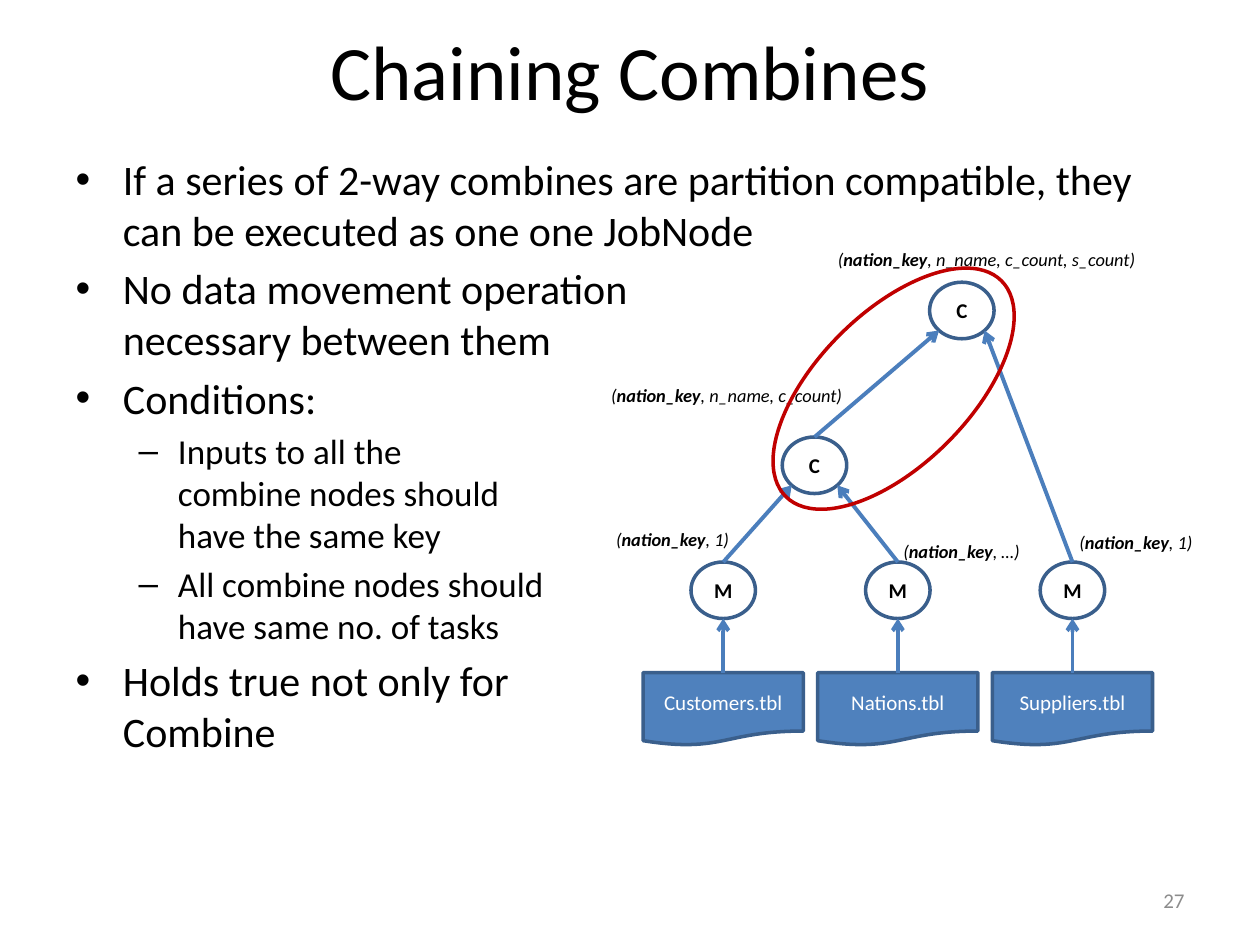
from math import sqrt

from lxml import etree
from pptx import Presentation
from pptx import util as u
from pptx.dml.color import RGBColor
from pptx.enum import shapes, text
from pptx.oxml.ns import qn

BLACK = RGBColor(0x00, 0x00, 0x00)
WHITE = RGBColor(0xFF, 0xFF, 0xFF)
GREY = RGBColor(0x8C, 0x8C, 0x8C)
BLUE = RGBColor(0x4F, 0x81, 0xBD)
OUTLINE = RGBColor(0x3A, 0x5F, 0x8C)
ARROW = RGBColor(0x4B, 0x7E, 0xBC)
RED = RGBColor(0xC0, 0x00, 0x00)

NODE_W, NODE_H = 1.3, 1.14
TABLE_W, TABLE_H = 3.23, 1.47
FIRST_X, PITCH = 14.58, 3.52
MAP_Y, TABLE_Y = 11.33, 13.56

BULLETS = [
    (0, "If a series of 2-way combines are partition compatible, "
        "they can be executed as one one JobNode"),
    (0, "No data movement operation\nnecessary between them"),
    (0, "Conditions:"),
    (1, "Inputs to all the\ncombine nodes should\nhave the same key"),
    (1, "All combine nodes should\nhave same no. of tasks"),
    (0, "Holds true not only for\nCombine"),
]
TABLES = ["Customers.tbl", "Nations.tbl", "Suppliers.tbl"]
KEY_LABELS = [
    (17.96, 10.77, 2.9, ", …)"),
    (12.17, 10.52, 2.84, ", 1)"),
    (21.51, 10.59, 2.84, ", 1)"),
    (12.07, 7.62, 5.26, ", n_name, c_count)"),
    (16.64, 4.88, 6.63, ", n_name, c_count, s_count)"),
]


def place(item, left, top, width, height):
    """Move and size an object, in centimetres."""
    sizes = {"left": left, "top": top, "width": width, "height": height}
    for name, value in sizes.items():
        setattr(item, name, u.Cm(value))


def style(span, size, color, **extra):
    """Apply font values to one run."""
    values = {"name": "Calibri", "size": u.Pt(size), **extra}
    for name, value in values.items():
        setattr(span.font, name, value)
    span.font.color.rgb = color


def write(para, words, size, color, **extra):
    """Fill a paragraph and format its runs and line breaks."""
    para.text = words
    for span in para.runs:
        style(span, size, color, **extra)
    for line_break in para._p.findall(qn("a:br")):
        etree.SubElement(line_break, qn("a:rPr"), sz=str(size * 100))


def add_title(page, words):
    """Fill the title placeholder."""
    title = page.shapes.title
    place(title, 1.27, 0.2, 22.86, 2.41)
    write(title.text_frame.paragraphs[0], words, 44, BLACK)


def add_bullets(page, items):
    """Fill the body placeholder with a two-level list."""
    body = page.placeholders[1]
    place(body, 1.27, 2.97, 22.86, 14.6)
    frame = body.text_frame
    frame.auto_size = text.MSO_AUTO_SIZE.NONE
    for index, (level, words) in enumerate(items):
        para = frame.add_paragraph() if index else frame.paragraphs[0]
        para.level = level
        write(para, words, 20 if level else 24, BLACK)


def add_outline(page, kind, left, top, width, height, line, fill=None):
    """Add a preset shape with a 2 pt line and an optional fill."""
    shape = page.shapes.add_shape(kind, *map(u.Cm, (left, top, width, height)))
    shape.shadow.inherit = False
    shape.line.color.rgb = line
    shape.line.width = u.Pt(2)
    if fill is None:
        shape.fill.background()
    else:
        shape.fill.solid()
        shape.fill.fore_color.rgb = fill
    return shape


def caption(shape, words, color, bold):
    """Centre a caption inside a shape."""
    frame = shape.text_frame
    settings = {"margin_left": 0, "margin_right": 0,
                "vertical_anchor": text.MSO_ANCHOR.MIDDLE}
    for name, value in settings.items():
        setattr(frame, name, value)
    para = frame.paragraphs[0]
    para.alignment = text.PP_ALIGN.CENTER
    write(para, words, 12, color, bold=bold)


def add_node(page, letter, center, top):
    """Add a round operator node."""
    node = add_outline(page, shapes.MSO_SHAPE.OVAL, center - NODE_W / 2, top,
                       NODE_W, NODE_H, OUTLINE)
    caption(node, letter, BLACK, True)
    return node


def add_table_file(page, name, center):
    """Add a document shape for an input table."""
    box = add_outline(page, shapes.MSO_SHAPE.FLOWCHART_DOCUMENT,
                      center - TABLE_W / 2, TABLE_Y, TABLE_W, TABLE_H,
                      OUTLINE, BLUE)
    caption(box, name, WHITE, False)
    return box


def rim(node, across, down):
    """Return the point on a node's rim in the given direction."""
    scale = 0.5 / sqrt(across ** 2 + down ** 2)
    return (int(node.left + node.width * (0.5 + across * scale)),
            int(node.top + node.height * (0.5 + down * scale)))


def add_arrow(page, source, target, across):
    """Join the top of a source to the lower rim of a target node."""
    line = page.shapes.add_connector(shapes.MSO_CONNECTOR.STRAIGHT,
                                     *rim(source, 0, -1), *rim(target, across, 1))
    line.begin_connect(source, 0)
    line.line.color.rgb = ARROW
    line.line.width = u.Pt(2.25)
    etree.SubElement(line.line._get_or_add_ln(), qn("a:tailEnd"), type="arrow")
    etree.SubElement(line._element.spPr, qn("a:effectLst"))


def add_key_label(page, left, top, width, rest):
    """Add an italic tuple label with its key in bold."""
    box = page.shapes.add_textbox(*map(u.Cm, (left, top, width, 0.71)))
    box.text_frame.word_wrap = False
    box.text_frame.auto_size = text.MSO_AUTO_SIZE.SHAPE_TO_FIT_TEXT
    para = box.text_frame.paragraphs[0]
    for words, bold in (("(", False), ("nation_key", True), (rest, False)):
        span = para.add_run()
        span.text = words
        style(span, 10.5, BLACK, bold=bold, italic=True)


def add_page_number(page, number):
    """Add the page number at the lower right."""
    box = page.shapes.add_textbox(*map(u.Cm, (18.2, 17.65, 5.93, 1.01)))
    box.text_frame.word_wrap = True
    box.text_frame.vertical_anchor = text.MSO_ANCHOR.MIDDLE
    para = box.text_frame.paragraphs[0]
    para.alignment = text.PP_ALIGN.RIGHT
    write(para, number, 12, GREY)


def add_plan(page):
    """Draw the tree of map and combine nodes over the tables."""
    lower = add_node(page, "C", 16.42, 8.81)
    upper = add_node(page, "C", 19.39, 5.69)
    parents = [(lower, -1), (lower, 1), (upper, 1)]
    for index, (name, (parent, across)) in enumerate(zip(TABLES, parents)):
        center = FIRST_X + index * PITCH
        table = add_table_file(page, name, center)
        mapper = add_node(page, "M", center, MAP_Y)
        add_arrow(page, table, mapper, 0)
        add_arrow(page, mapper, parent, across)
    add_arrow(page, lower, upper, -1)
    for label in KEY_LABELS:
        add_key_label(page, *label)
    ring = add_outline(page, shapes.MSO_SHAPE.OVAL, 14.94, 6.3, 6.15, 3.07, RED)
    ring.rotation = 315


def main():
    """Build the slide and save it."""
    deck = Presentation()
    deck.slide_width, deck.slide_height = u.Cm(25.4), u.Cm(19.05)
    page = deck.slides.add_slide(deck.slide_layouts[1])
    add_title(page, "Chaining Combines")
    add_bullets(page, BULLETS)
    add_plan(page)
    add_page_number(page, "27")
    deck.save("out.pptx")


if __name__ == "__main__":
    main()
